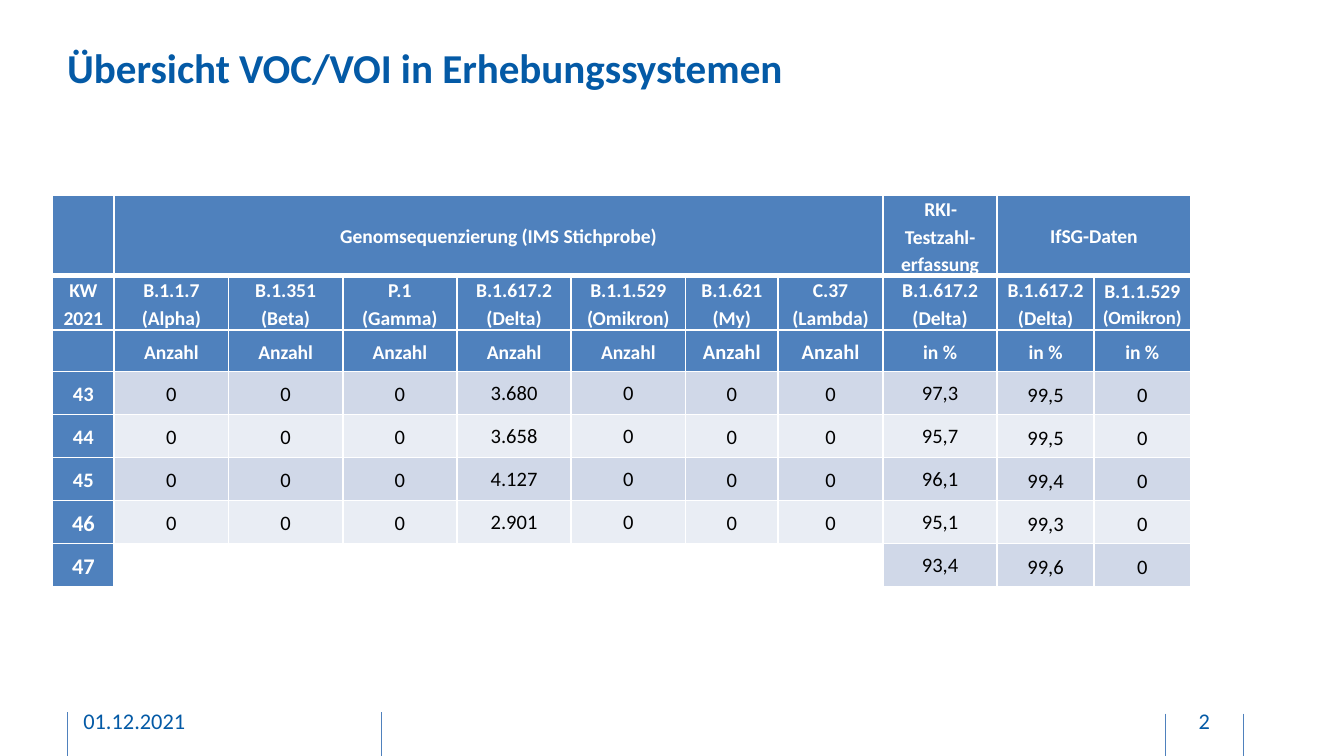
from dataclasses import dataclass

from lxml import etree
from pptx import Presentation
from pptx.dml.color import RGBColor
from pptx.enum.shapes import MSO_CONNECTOR
from pptx.enum.text import MSO_ANCHOR, PP_ALIGN
from pptx.oxml.ns import qn
from pptx.slide import Slide
from pptx.table import Table, _Cell
from pptx.util import Inches, Pt

STRAIGHT = MSO_CONNECTOR.STRAIGHT
MIDDLE = MSO_ANCHOR.MIDDLE
LEFT = PP_ALIGN.LEFT
CENTER = PP_ALIGN.CENTER

TITLE_BLUE = RGBColor(0x04, 0x5A, 0xA6)
HEADER_BLUE = RGBColor(0x4F, 0x81, 0xBD)
DARK_BAND = RGBColor(0xD0, 0xD8, 0xE8)
LIGHT_BAND = RGBColor(0xE9, 0xED, 0xF4)
WHITE = RGBColor(0xFF, 0xFF, 0xFF)
BLACK = RGBColor(0x00, 0x00, 0x00)
FONT = "Calibri"

COLUMN_WIDTHS = [0.46] + [0.85] * 5 + [0.69, 0.78, 0.85, 0.72, 0.72]
ROW_HEIGHTS = [0.31] * 3 + [0.32] * 5
HEADER_ROWS = [
    ["", "Genomsequenzierung (IMS Stichprobe)", "", "", "", "", "", "",
     "RKI-Testzahl-erfassung", "IfSG-Daten", ""],
    ["KW 2021", "B.1.1.7 (Alpha)", "B.1.351 (Beta)", "P.1 (Gamma)",
     "B.1.617.2 (Delta)", "B.1.1.529\v(Omikron)", "B.1.621\v(My)",
     "C.37\v(Lambda)", "B.1.617.2 (Delta)", "B.1.617.2 (Delta)",
     "B.1.1.529\v(Omikron)"],
    [""] + ["Anzahl"] * 7 + ["in %"] * 3,
]
WEEK_ROWS = [
    ["43", "0", "0", "0", "3.680", "0", "0", "0", "97,3", "99,5", "0"],
    ["44", "0", "0", "0", "3.658", "0", "0", "0", "95,7", "99,5", "0"],
    ["45", "0", "0", "0", "4.127", "0", "0", "0", "96,1", "99,4", "0"],
    ["46", "0", "0", "0", "2.901", "0", "0", "0", "95,1", "99,3", "0"],
    ["47", "", "", "", "", "", "", "", "93,4", "99,6", "0"],
]
TIGHT_COLUMNS = {4, 5, 8, 9, 10}
SINGLE_SPACED_COLUMNS = {4, 5, 8}
LARGE_HEADER_COLUMNS = {6, 7}
LARGE_WEEKS = {"46", "47"}


@dataclass(frozen=True)
class Label:
    text: str
    left: float
    top: float
    width: float
    height: float
    size: float
    bold: bool = False
    align: PP_ALIGN = LEFT
    inset: float = 0


@dataclass(frozen=True)
class FooterRule:
    left: float
    top: float
    height: float = 0.34


@dataclass(frozen=True)
class CellStyle:
    fill: RGBColor | None
    color: RGBColor
    size: float
    bold: bool
    spacing: float = 1.15
    inset: float = 0.05


LABELS = [
    Label("01.12.2021", 0.62, 5.21, 2.03, 0.3, 12, inset=0.05),
    Label("2", 8.69, 5.21, 0.54, 0.3, 12, align=CENTER, inset=0.05),
    Label("Übersicht VOC/VOI in Erhebungssystemen", 0.5, 0.11, 8.73, 0.78, 22, bold=True),
]
FOOTER_RULES = [
    FooterRule(8.67, 5.31), FooterRule(2.84, 5.3),
    FooterRule(0.5, 5.3), FooterRule(9.25, 5.31),
]


def add_footer_rule(slide: Slide, rule: FooterRule) -> None:
    connector = slide.shapes.add_connector(
        STRAIGHT, Inches(rule.left), Inches(rule.top),
        Inches(rule.left), Inches(rule.top + rule.height))
    connector.line.color.rgb = HEADER_BLUE
    connector.line.width = Pt(0.5)
    etree.SubElement(connector.element.spPr, qn("a:effectLst"))


def add_label(slide: Slide, label: Label) -> None:
    box = slide.shapes.add_textbox(
        Inches(label.left), Inches(label.top), Inches(label.width), Inches(label.height))
    frame = box.text_frame
    frame.word_wrap = True
    frame.vertical_anchor = MIDDLE
    frame.margin_left = frame.margin_right = 0
    frame.margin_top = frame.margin_bottom = Inches(label.inset)
    frame.text = label.text
    paragraph = frame.paragraphs[0]
    paragraph.alignment = label.align
    font = paragraph.runs[0].font
    font.name, font.size, font.bold = FONT, Pt(label.size), label.bold
    font.color.rgb = TITLE_BLUE


def add_borders(cell: _Cell, top: float, bottom: float) -> None:
    """Draw white borders; this has to come before the cell's fill."""
    properties = cell._tc.get_or_add_tcPr()
    for tag, points in (("a:lnL", 1), ("a:lnR", 1), ("a:lnT", top), ("a:lnB", bottom)):
        line = etree.SubElement(properties, qn(tag), w=str(Pt(points)))
        solid = etree.SubElement(line, qn("a:solidFill"))
        etree.SubElement(solid, qn("a:srgbClr"), val=str(WHITE))


def cell_style(row: int, column: int) -> CellStyle:
    if row < len(HEADER_ROWS):
        large = row == 2 and column in LARGE_HEADER_COLUMNS
        return CellStyle(HEADER_BLUE, WHITE, 11 if large else 10.5, True)
    week = WEEK_ROWS[row - len(HEADER_ROWS)]
    if column == 0:
        return CellStyle(HEADER_BLUE, WHITE, 12 if week[0] in LARGE_WEEKS else 11, True)
    band = DARK_BAND if row % 2 else LIGHT_BAND
    return CellStyle(
        band if week[column] else None, BLACK, 11, False,
        1 if column in SINGLE_SPACED_COLUMNS else 1.15,
        0.01 if column in TIGHT_COLUMNS else 0.05)


def fill_cell(cell: _Cell, text: str, style: CellStyle) -> None:
    if style.fill is None:
        cell.fill.background()
    else:
        cell.fill.solid()
        cell.fill.fore_color.rgb = style.fill
    cell.vertical_anchor = MIDDLE
    cell.margin_left = cell.margin_right = Inches(style.inset)
    cell.margin_top = Inches(0.01 if style.inset == 0.01 else 0)
    cell.margin_bottom = 0
    if not text:
        return
    cell.text_frame.text = text
    paragraph = cell.text_frame.paragraphs[0]
    paragraph.alignment = CENTER
    paragraph.line_spacing = style.spacing
    for run in paragraph.runs:
        run.font.name, run.font.size, run.font.bold = FONT, Pt(style.size), style.bold
        run.font.color.rgb = style.color


def add_variant_table(slide: Slide) -> Table:
    rows = HEADER_ROWS + WEEK_ROWS
    table = slide.shapes.add_table(
        len(rows), len(COLUMN_WIDTHS), Inches(0.39), Inches(1.45),
        Inches(sum(COLUMN_WIDTHS)), Inches(sum(ROW_HEIGHTS))).table
    table.first_row = table.horz_banding = False
    for column, width in zip(table.columns, COLUMN_WIDTHS):
        column.width = Inches(width)
    for row, height in zip(table.rows, ROW_HEIGHTS):
        row.height = Inches(height)
    for row_index, texts in enumerate(rows):
        for column_index, text in enumerate(texts):
            cell = table.cell(row_index, column_index)
            add_borders(cell, 3 if row_index == 1 else 1, 3 if row_index == 0 else 1)
            fill_cell(cell, text, cell_style(row_index, column_index))
    table.cell(0, 1).merge(table.cell(0, 7))
    table.cell(0, 9).merge(table.cell(0, 10))
    return table


def main() -> None:
    presentation = Presentation()
    presentation.slide_width = Inches(10)
    presentation.slide_height = Inches(10 * 9 / 16)
    slide = presentation.slides.add_slide(presentation.slide_layouts[6])
    for rule in FOOTER_RULES:
        add_footer_rule(slide, rule)
    for label in LABELS:
        add_label(slide, label)
    table = add_variant_table(slide)
    omicron_name = table.cell(1, 10).text_frame.paragraphs[0].runs[-1]
    omicron_name.font.size = Pt(10)
    presentation.save("out.pptx")


if __name__ == "__main__":
    main()
